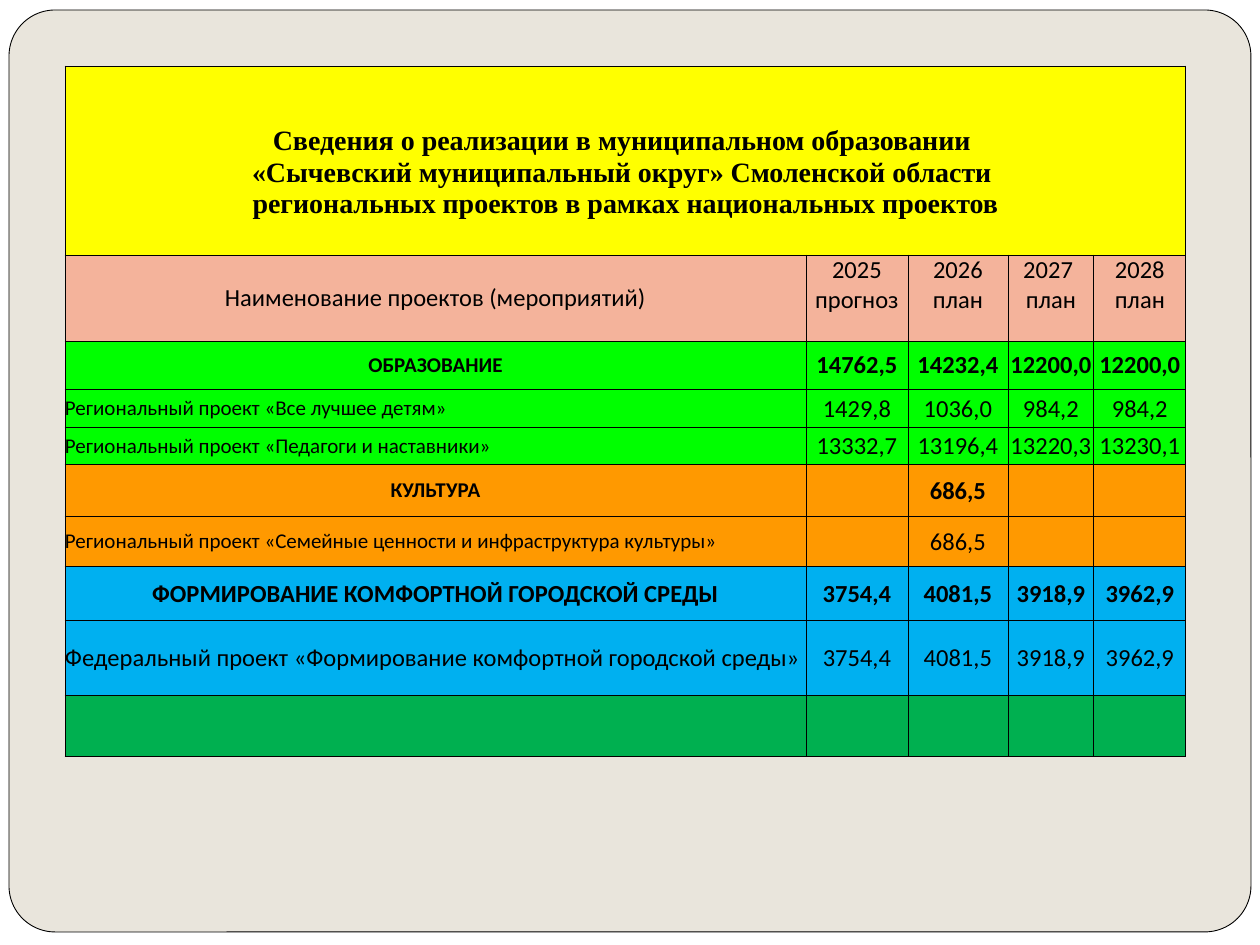
"""Build a slide with a budget table of regional projects by year."""
from dataclasses import dataclass

from lxml import etree
from pptx import Presentation, util as u
from pptx.dml.color import RGBColor
from pptx.enum import shapes, text
from pptx.oxml import ns

PX = 914400 // 126


@dataclass(frozen=True)
class Theme:
    page: str = "FFFFFF"
    panel: str = "E9E5DC"
    ink: str = "000000"
    title: str = "FFFF00"
    header: str = "F4B39B"
    education: str = "00FF00"
    culture: str = "FF9900"
    city: str = "00B0F0"
    footer: str = "00B050"
    title_font: str = "Times New Roman"
    body_font: str = "Calibri"
    title_size: int = 16
    body_size: int = 14
    small_size: int = 12
    line: float = 0.5


THEME = Theme()
TITLE = (
    "Сведения о реализации в муниципальном образовании \n"
    "«Сычевский муниципальный округ» Смоленской области \n"
    "региональных проектов в рамках национальных проектов"
)
HEADER = ("Наименование проектов (мероприятий)",
          "2025 прогноз", "2026 план", "2027 \nплан", "2028 план")
SECTIONS = [
    (THEME.education, THEME.small_size, [
        ("ОБРАЗОВАНИЕ", "14762,5", "14232,4", "12200,0", "12200,0"),
        ("Региональный проект «Все лучшее детям»", "1429,8", "1036,0", "984,2", "984,2"),
        ("Региональный проект «Педагоги и наставники»",
         "13332,7", "13196,4", "13220,3", "13230,1"),
    ]),
    (THEME.culture, THEME.small_size, [
        ("КУЛЬТУРА", "", "686,5", "", ""),
        ("Региональный проект «Семейные ценности и инфраструктура культуры»",
         "", "686,5", "", ""),
    ]),
    (THEME.city, THEME.body_size, [
        ("ФОРМИРОВАНИЕ КОМФОРТНОЙ ГОРОДСКОЙ СРЕДЫ",
         "3754,4", "4081,5", "3918,9", "3962,9"),
        ("Федеральный проект «Формирование комфортной городской среды»",
         "3754,4", "4081,5", "3918,9", "3962,9"),
    ]),
]
TABLE_LEFT, TABLE_TOP = 65, 66
TITLE_INSET = 60
COLUMN_WIDTHS = (741, 102, 100, 86, 92)
ROW_HEIGHTS = (189, 86, 49, 38, 37, 52, 50, 54, 75, 61)


def color(code):
    return RGBColor.from_string(code)


def add_borders(cell):
    properties = cell._tc.get_or_add_tcPr()
    for side in ("a:lnL", "a:lnR", "a:lnT", "a:lnB"):
        border = etree.SubElement(properties, ns.qn(side), w=str(u.Pt(THEME.line)))
        solid = etree.SubElement(border, ns.qn("a:solidFill"))
        etree.SubElement(solid, ns.qn("a:srgbClr"), val=THEME.ink)


def fill_cell(cell, wording, fill, size=THEME.body_size, font=THEME.body_font, bold=False,
              align=text.PP_ALIGN.CENTER, anchor=text.MSO_ANCHOR.MIDDLE, inset=0):
    add_borders(cell)
    cell.fill.solid()
    cell.fill.fore_color.rgb = color(fill)
    cell.margin_left = cell.margin_right = cell.margin_bottom = 0
    cell.margin_top = inset * PX
    cell.vertical_anchor = anchor
    cell.text_frame.text = wording
    for paragraph in cell.text_frame.paragraphs:
        paragraph.alignment = align
        paragraph.font.size = u.Pt(size)
        for run in paragraph.runs:
            run.font.size, run.font.name, run.font.bold = u.Pt(size), font, bold
            run.font.color.rgb = color(THEME.ink)


def add_panel(slide):
    panel = slide.shapes.add_shape(shapes.MSO_SHAPE.ROUNDED_RECTANGLE,
                                   9 * PX, 10 * PX, 1242 * PX, 922 * PX)
    panel.adjustments[0] = 0.05
    panel.shadow.inherit = False
    panel.fill.solid()
    panel.fill.fore_color.rgb = color(THEME.panel)
    panel.line.color.rgb = color(THEME.ink)
    panel.line.width = u.Pt(THEME.line)


def add_projects(slide):
    projects = slide.shapes.add_table(
        len(ROW_HEIGHTS), len(COLUMN_WIDTHS), TABLE_LEFT * PX, TABLE_TOP * PX,
        sum(COLUMN_WIDTHS) * PX, sum(ROW_HEIGHTS) * PX).table
    projects.first_row = projects.horz_banding = False
    for column, width in zip(projects.columns, COLUMN_WIDTHS):
        column.width = width * PX
    for row, height in zip(projects.rows, ROW_HEIGHTS):
        row.height = height * PX

    title, *covered = projects.rows[0].cells
    title.merge(covered[-1])
    fill_cell(title, TITLE, THEME.title, THEME.title_size, THEME.title_font, True,
              anchor=text.MSO_ANCHOR.TOP, inset=TITLE_INSET)
    for cell in covered:
        fill_cell(cell, "", THEME.title)

    for index, (cell, wording) in enumerate(zip(projects.rows[1].cells, HEADER)):
        anchor = text.MSO_ANCHOR.TOP if index else text.MSO_ANCHOR.MIDDLE
        fill_cell(cell, wording, THEME.header, anchor=anchor)

    body = [(fill, size, entry, position == 0)
            for fill, size, entries in SECTIONS for position, entry in enumerate(entries)]
    for number, (fill, size, (name, *amounts), is_total) in enumerate(body, start=2):
        name_cell, *amount_cells = projects.rows[number].cells
        align = text.PP_ALIGN.CENTER if is_total else text.PP_ALIGN.JUSTIFY
        fill_cell(name_cell, name, fill, size, bold=is_total, align=align)
        for cell, amount in zip(amount_cells, amounts):
            fill_cell(cell, amount, fill, bold=is_total)

    for cell in projects.rows[len(ROW_HEIGHTS) - 1].cells:
        fill_cell(cell, "", THEME.footer)


def main():
    deck = Presentation()
    deck.slide_width, deck.slide_height = 1260 * PX, 945 * PX
    slide = deck.slides.add_slide(deck.slide_layouts[6])
    slide.background.fill.solid()
    slide.background.fill.fore_color.rgb = color(THEME.page)
    add_panel(slide)
    add_projects(slide)
    deck.save("out.pptx")


if __name__ == "__main__":
    main()
